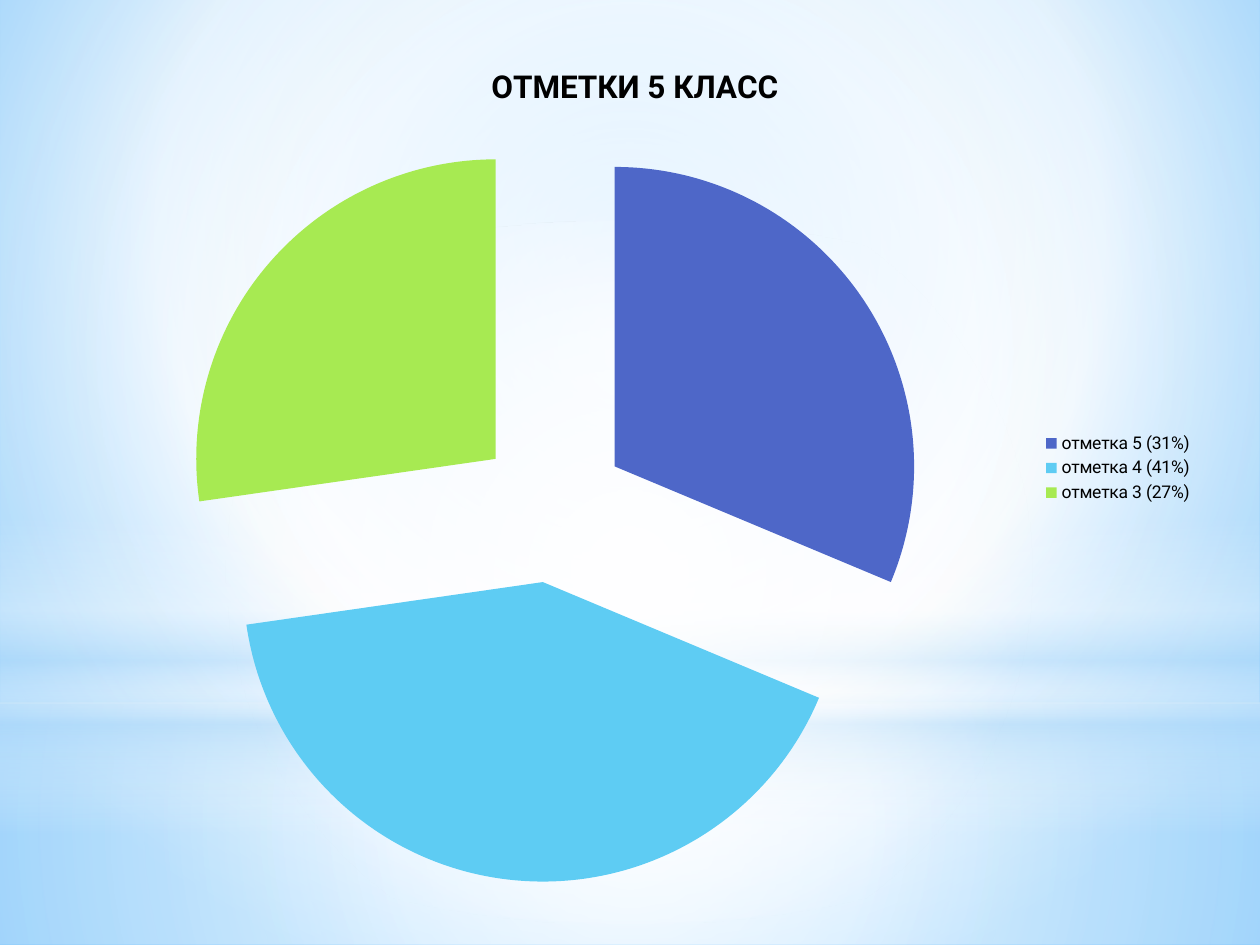
from lxml.etree import SubElement
from pptx import Presentation
from pptx.chart.data import CategoryChartData
from pptx.dml.color import RGBColor
from pptx.enum.chart import XL_CHART_TYPE as ChartType, XL_LEGEND_POSITION as LegendPosition
from pptx.enum.shapes import MSO_SHAPE as ShapeType
from pptx.oxml.ns import qn
from pptx.util import Inches, Pt

BLACK = RGBColor(0x00, 0x00, 0x00)
WHITE = RGBColor(0xFF, 0xFF, 0xFF)
SKY = RGBColor(0x9E, 0xD5, 0xFF)
DEEP_SKY = RGBColor(0x5B, 0xB9, 0xFF)
HAZE = RGBColor(0xB4, 0xDC, 0xFA)
INDIGO = RGBColor(0x4E, 0x67, 0xC8)
CYAN = RGBColor(0x5E, 0xCC, 0xF3)
LIME = RGBColor(0xA7, 0xEA, 0x52)
CENTER = (50, 50, 50, 50)


class SlideBuilder:
    font_name = "Roboto"
    text_size = Pt(10)
    title_size = Pt(18)

    def __init__(self, slide):
        self.slide = slide

    def gradient(self, fill, parent, stops, focus=None, angle=90):
        fill.gradient()
        gradient = parent.find(".//" + qn("a:gradFill"))
        for child in list(gradient):
            gradient.remove(child)
        stop_list = SubElement(gradient, qn("a:gsLst"))
        for position, color, opacity in stops:
            stop = SubElement(stop_list, qn("a:gs"), pos=str(position * 1000))
            color_element = SubElement(stop, qn("a:srgbClr"), val=str(color))
            if opacity < 100:
                SubElement(color_element, qn("a:alpha"), val=str(opacity * 1000))
        if focus:
            shade = SubElement(gradient, qn("a:path"), path="circle")
            sides = {side: str(value * 1000) for side, value in zip("ltrb", focus)}
            SubElement(shade, qn("a:fillToRect"), **sides)
        else:
            SubElement(gradient, qn("a:lin"), ang=str(angle * 60000), scaled="0")

    def background(self, stops, focus):
        self.gradient(self.slide.background.fill, self.slide.element, stops, focus)

    def glow(self, kind, top, height, stops, focus=None):
        shape = self.slide.shapes.add_shape(
            kind, Inches(0), Inches(top), Inches(10), Inches(height))
        shape.shadow.inherit = False
        shape.line.fill.background()
        self.gradient(shape.fill, shape.element.spPr, stops, focus)

    def pie(self, left, top, width, height, title, marks, explosion):
        data = CategoryChartData()
        data.categories = [name for name, value, color in marks]
        data.add_series(title, [value for name, value, color in marks])
        chart = self.slide.shapes.add_chart(
            ChartType.PIE, Inches(left), Inches(top), Inches(width), Inches(height), data).chart
        chart.font.name = self.font_name
        chart.font.size = self.text_size
        chart.font.color.rgb = BLACK
        chart.has_title = True
        chart.chart_title.include_in_layout = False
        chart.chart_title.text_frame.text = title
        title_font = chart.chart_title.text_frame.paragraphs[0].font
        title_font.name = self.font_name
        title_font.size = self.title_size
        title_font.bold = True
        title_font.color.rgb = BLACK
        chart.has_legend = True
        chart.legend.position = LegendPosition.RIGHT
        chart.legend.include_in_layout = False
        plot = chart.plots[0]
        plot.vary_by_categories = True
        series = plot.series[0]
        series_element = series._element
        exploded = SubElement(series_element, qn("c:explosion"), val=str(explosion))
        series_element.find(qn("c:tx")).addnext(exploded)
        for index, (name, value, color) in enumerate(marks):
            point_fill = series.points[index].format.fill
            point_fill.solid()
            point_fill.fore_color.rgb = color


def main():
    presentation = Presentation()
    presentation.slide_width = Inches(10)
    presentation.slide_height = Inches(7.5)
    builder = SlideBuilder(presentation.slides.add_slide(presentation.slide_layouts[6]))

    builder.background([(0, SKY, 100), (60, WHITE, 100), (100, DEEP_SKY, 100)], (20, 10, 20, 60))
    builder.glow(ShapeType.RECTANGLE, 5.58, 1.92,
                 [(0, WHITE, 91), (37, WHITE, 76), (100, HAZE, 79)], CENTER)
    builder.glow(ShapeType.RECTANGLE, 0, 5.58,
                 [(0, WHITE, 89), (48, WHITE, 62), (100, HAZE, 79)], CENTER)
    builder.glow(ShapeType.RECTANGLE, 4.12, 2.5,
                 [(0, WHITE, 0), (29, WHITE, 30), (45, HAZE, 40),
                  (55, WHITE, 26), (65, HAZE, 60), (100, WHITE, 0)])
    builder.glow(ShapeType.OVAL, 1.75, 5.58, [(0, WHITE, 100), (56, WHITE, 0)], CENTER)

    marks = [
        ("отметка 5 (31%)", 31, INDIGO),
        ("отметка 4 (41%)", 41, CYAN),
        ("отметка 3 (27%)", 27, LIME),
    ]
    builder.pie(0.51, 0.29, 9.06, 6.85, "ОТМЕТКИ 5 КЛАСС", marks, 25)
    presentation.save("out.pptx")


if __name__ == "__main__":
    main()
